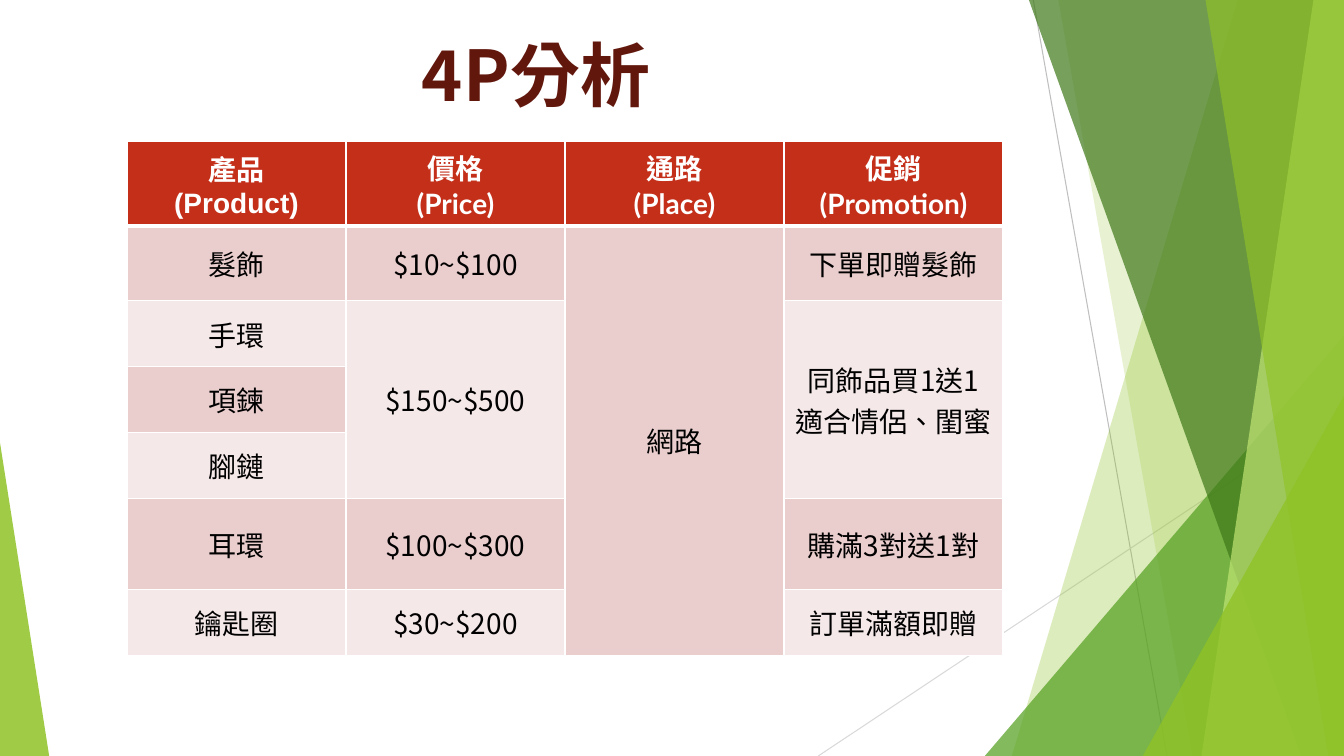
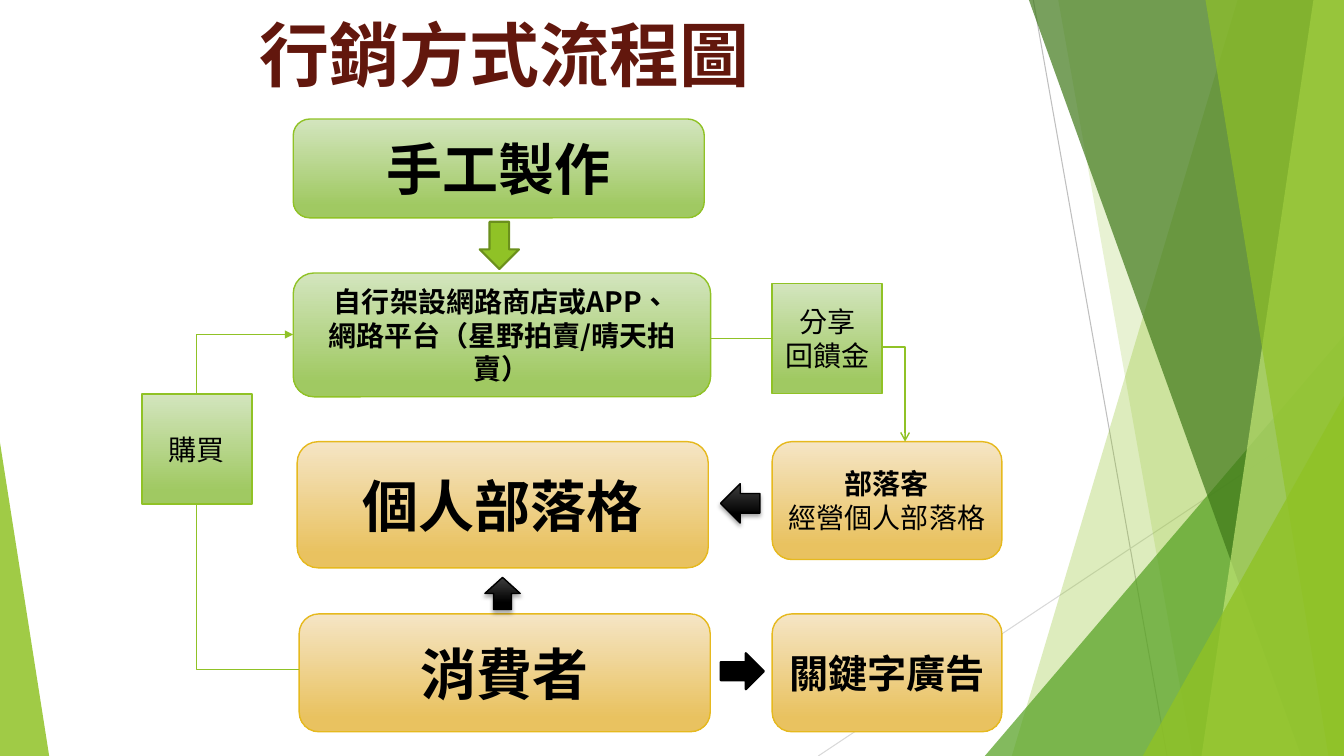
from lxml import etree
from pptx import Presentation
from pptx.dml.color import RGBColor
from pptx.enum import shapes, text
from pptx.oxml.ns import qn
from pptx.util import Cm, Pt

WIDTH, HEIGHT = 33.87, 19.05
FONT = "Noto Sans CJK SC"
LANGUAGE = "zh-TW"
WHITE, BLACK = "FFFFFF", "000000"
GREEN, DARK_GREEN = "90C226", "6B901C"
GOLD = "E6B91E"
TITLE_COLOR = "62170D"
HEADER_FILL, BAND_FILLS = "C42F1A", ("F5E8E8", "EACDCD")

# Gradients: top colour, bottom colour, position of the bottom colour
GREEN_FADE = ("D3E5BE", "A0C962", 0.88)
GOLD_FADE = ("F5E5C5", "E9C260", 0.88)
BLACK_FADE = ("3F3F3F", BLACK, 0.78)

SHAPE = shapes.MSO_SHAPE

# Backdrop bands run to the right edge: top-left x, bottom-left x, colour, opacity
BACK_BANDS = [(31.19, 25.5, GREEN, 30), (26.67, 30.05, GREEN, 20)]
FRONT_BANDS = [
    (25.93, 32.79, "3F7819", 70),
    (33.1, 30.28, "C0E474", 70),
    (30.38, 33.48, GREEN, 65),
]

HEADERS = [
    ("產品\n(Product)", "Arial"),
    ("價格\n(Price)", "Lato"),
    ("通路\n(Place)", "Lato"),
    ("促銷\n(Promotion)", "Lato"),
]
OFFERS = [
    ("髮飾", "$10~$100", "網路", "下單即贈髮飾"),
    ("手環", "$150~$500", "", "同飾品買1送1\n適合情侶、閨蜜"),
    ("項鍊", "", "", ""),
    ("腳鏈", "", "", ""),
    ("耳環", "$100~$300", "", "購滿3對送1對"),
    ("鑰匙圈", "$30~$200", "", "訂單滿額即贈"),
]
ROW_HEIGHTS = [2.14, 1.88, 1.66, 1.66, 1.66, 2.29, 1.66]
MERGES = [(1, 6, 2), (2, 4, 1), (2, 4, 3)]  # first row, last row, column


def rgb(color):
    return RGBColor.from_string(color)


def add_xml(parent, tag, **attributes):
    return etree.SubElement(parent, qn(tag), attributes)


def write(frame, content, size, color=BLACK, bold=False, font=FONT):
    """Centre the text in its frame and format every run."""
    frame.text = content
    frame.word_wrap = True
    frame.vertical_anchor = text.MSO_ANCHOR.MIDDLE
    for paragraph in frame.paragraphs:
        paragraph.alignment = text.PP_ALIGN.CENTER
        for run in paragraph.runs:
            run.font.name = font
            run.font.size = Pt(size)
            run.font.bold = bold
            run.font.color.rgb = rgb(color)
            run.font._element.set("lang", LANGUAGE)
            add_xml(run.font._element, "a:ea", typeface=FONT)


def paint(shape, fill, line=None, line_width=1):
    """Fill with a colour or a fade, and draw the outline if there is one."""
    shape.shadow.inherit = False
    if isinstance(fill, tuple):
        top, bottom, end = fill
        shape.fill.gradient()
        shape.fill.gradient_angle = 270
        for stop, color, position in zip(shape.fill.gradient_stops, (top, bottom), (0, end)):
            stop.color.rgb = rgb(color)
            stop.position = position
    else:
        shape.fill.solid()
        shape.fill.fore_color.rgb = rgb(fill)
    if line:
        shape.line.color.rgb = rgb(line)
        shape.line.width = Pt(line_width)
    else:
        shape.line.fill.background()


def set_opacity(shape, percent):
    color = shape._element.spPr.find(qn("a:solidFill")).find(qn("a:srgbClr"))
    add_xml(color, "a:alpha", val=str(percent * 1000))


def add_shape(slide, kind, box, fill, line=None, line_width=1):
    shape = slide.shapes.add_shape(kind, *map(Cm, box))
    paint(shape, fill, line, line_width)
    return shape


def add_soft_shadow(shape):
    effects = shape._element.spPr.find(qn("a:effectLst"))
    shadow = add_xml(effects, "a:outerShdw", blurRad=str(Pt(3)), dist=str(Pt(2)),
                     dir="5400000", rotWithShape="0")
    color = add_xml(shadow, "a:srgbClr", val=BLACK)
    add_xml(color, "a:alpha", val="35000")


def add_line(slide, start, end, color=GREEN, width=1, bent=False, head=None, tail=None):
    """Draw a connector; a bent one leaves its start horizontally and turns once."""
    kind = shapes.MSO_CONNECTOR.ELBOW if bent else shapes.MSO_CONNECTOR.STRAIGHT
    line = slide.shapes.add_connector(kind, *map(Cm, start + end))
    line.line.color.rgb = rgb(color)
    line.line.width = Pt(width)
    properties = line._element.spPr
    if bent:
        properties.find(qn("a:prstGeom")).set("prst", "bentConnector2")
    for tag, arrow in (("a:headEnd", head), ("a:tailEnd", tail)):
        if arrow:
            add_xml(properties.find(qn("a:ln")), tag, type=arrow)
    add_xml(properties, "a:effectLst")


def add_band(slide, top_x, bottom_x, color, opacity):
    outline = slide.shapes.build_freeform(Cm(top_x), 0)
    corners = [(WIDTH, 0), (WIDTH, HEIGHT), (bottom_x, HEIGHT)]
    outline.add_line_segments([(Cm(x), Cm(y)) for x, y in corners])
    band = outline.convert_to_shape()
    paint(band, color)
    set_opacity(band, opacity)


def add_corner(slide, left, top, right, peak, color, opacity):
    """Triangle standing on the lower edge, its peak at 0 (left) or 1 (right)."""
    box = (left, top, right - left, HEIGHT - top)
    corner = add_shape(slide, SHAPE.ISOSCELES_TRIANGLE, box, color)
    corner.adjustments[0] = peak
    set_opacity(corner, opacity)


def add_backdrop(slide):
    add_line(slide, (26.04, 0), (29.41, HEIGHT), "BFBFBF", 0.75)
    add_line(slide, (WIDTH, 10.24), (20.62, HEIGHT), "D9D9D9", 0.75)
    for band in BACK_BANDS:
        add_band(slide, *band)
    add_corner(slide, 24.82, 8.46, WIDTH, 1, "54A021", 72)
    for band in FRONT_BANDS:
        add_band(slide, *band)
    add_corner(slide, 28.8, 9.98, WIDTH, 1, GREEN, 80)
    add_corner(slide, 0, 11.15, 1.24, 0, GREEN, 85)


def new_slide(deck, title, left, top):
    slide = deck.slides.add_slide(deck.slide_layouts[6])
    add_backdrop(slide)
    title_box = slide.shapes.add_textbox(Cm(left), Cm(top), Cm(23.88), Cm(2.39))
    write(title_box.text_frame, title, 50, TITLE_COLOR, bold=True)
    return slide


def set_borders(cell, bottom_width):
    """Put white borders ahead of the cell's fill, as the schema orders them."""
    properties = cell._tc.get_or_add_tcPr()
    sides = (("a:lnL", 1), ("a:lnR", 1), ("a:lnT", 1), ("a:lnB", bottom_width))
    for index, (tag, width) in enumerate(sides):
        border = etree.Element(qn(tag), w=str(Pt(width)))
        add_xml(add_xml(border, "a:solidFill"), "a:srgbClr", val=WHITE)
        properties.insert(index, border)


def fill_cell(cell, content, fill, bottom_width=1, **style):
    cell.fill.solid()
    cell.fill.fore_color.rgb = rgb(fill)
    set_borders(cell, bottom_width)
    write(cell.text_frame, content, 20, **style)
    cell.vertical_anchor = text.MSO_ANCHOR.MIDDLE


def add_offer_table(slide):
    frame = slide.shapes.add_table(len(ROW_HEIGHTS), len(HEADERS), Cm(3.2), Cm(3.56),
                                   Cm(5.52 * len(HEADERS)), Cm(sum(ROW_HEIGHTS)))
    table = frame.table
    for row, height in zip(table.rows, ROW_HEIGHTS):
        row.height = Cm(height)
    for column, (label, font) in enumerate(HEADERS):
        fill_cell(table.cell(0, column), label, HEADER_FILL, 3,
                  color=WHITE, bold=True, font=font)
    for row, offer in enumerate(OFFERS, start=1):
        for column, content in enumerate(offer):
            fill_cell(table.cell(row, column), content, BAND_FILLS[row % 2])
    for first, last, column in MERGES:
        table.cell(first, column).merge(table.cell(last, column))


def add_step(slide, kind, box, fade, line, content, size=20, bold=True):
    step = add_shape(slide, kind, box, fade, line)
    write(step.text_frame, content, size, bold=bold)
    return step


def add_flow(slide):
    green = (GREEN_FADE, GREEN)
    gold = (GOLD_FADE, GOLD)
    rounded, square = SHAPE.ROUNDED_RECTANGLE, SHAPE.RECTANGLE
    side_x, blog_y, buyer_y = 19.46, 11.13, 15.47

    add_line(slide, (16.87, 8.53), (19.63, 8.53))
    add_step(slide, rounded, (7.39, 3, 10.36, 2.49), *green, "手工製作", 40)
    add_step(slide, rounded, (7.39, 6.88, 10.52, 3.12), *green,
             "自行架設網路商店或APP、\n網路平台（星野拍賣/晴天拍賣）")
    add_step(slide, rounded, (7.49, blog_y, 10.36, 3.18), *gold, "個人部落格", 40)
    add_step(slide, rounded, (7.54, buyer_y, 10.36, 2.97), *gold, "消費者", 40)
    add_step(slide, square, (3.58, 9.93, 2.77, 2.77), *green, "購買", bold=False)
    add_step(slide, square, (side_x, 7.14, 2.77, 2.77), *green, "分享\n回饋金", bold=False)
    blogger = add_step(slide, rounded, (side_x, blog_y, 5.79, 2.97), *gold,
                       "部落客\n經營個人部落格")
    blogger.text_frame.paragraphs[1].runs[0].font.bold = False
    add_step(slide, rounded, (side_x, buyer_y, 5.79, 2.97), *gold, "關鍵字廣告", 28)

    add_shape(slide, SHAPE.DOWN_ARROW, (12.09, 5.59, 0.99, 1.19), GREEN, DARK_GREEN, 1.5)
    add_shape(slide, SHAPE.RIGHT_ARROW, (18.16, 16.46, 1.09, 0.91), BLACK, BLACK, 1.5)
    for kind, box in ((SHAPE.UP_ARROW, (12.22, 14.55, 0.89, 0.81)),
                      (SHAPE.LEFT_ARROW, (18.16, 12.19, 0.99, 0.99))):
        add_soft_shadow(add_shape(slide, kind, box, BLACK_FADE, BLACK))

    add_line(slide, (22.23, 8.74), (22.81, blog_y), bent=True, tail="arrow")
    add_line(slide, (7.54, 16.87), (4.96, 12.7), bent=True)
    add_line(slide, (7.39, 8.43), (4.96, 9.93), bent=True, head="triangle")


def main():
    deck = Presentation()
    deck.slide_width, deck.slide_height = Cm(WIDTH), Cm(HEIGHT)
    add_offer_table(new_slide(deck, "4P分析", 1.57, 0.66))
    add_flow(new_slide(deck, "行銷方式流程圖", 0.79, 0.15))
    deck.save("out.pptx")


if __name__ == "__main__":
    main()
